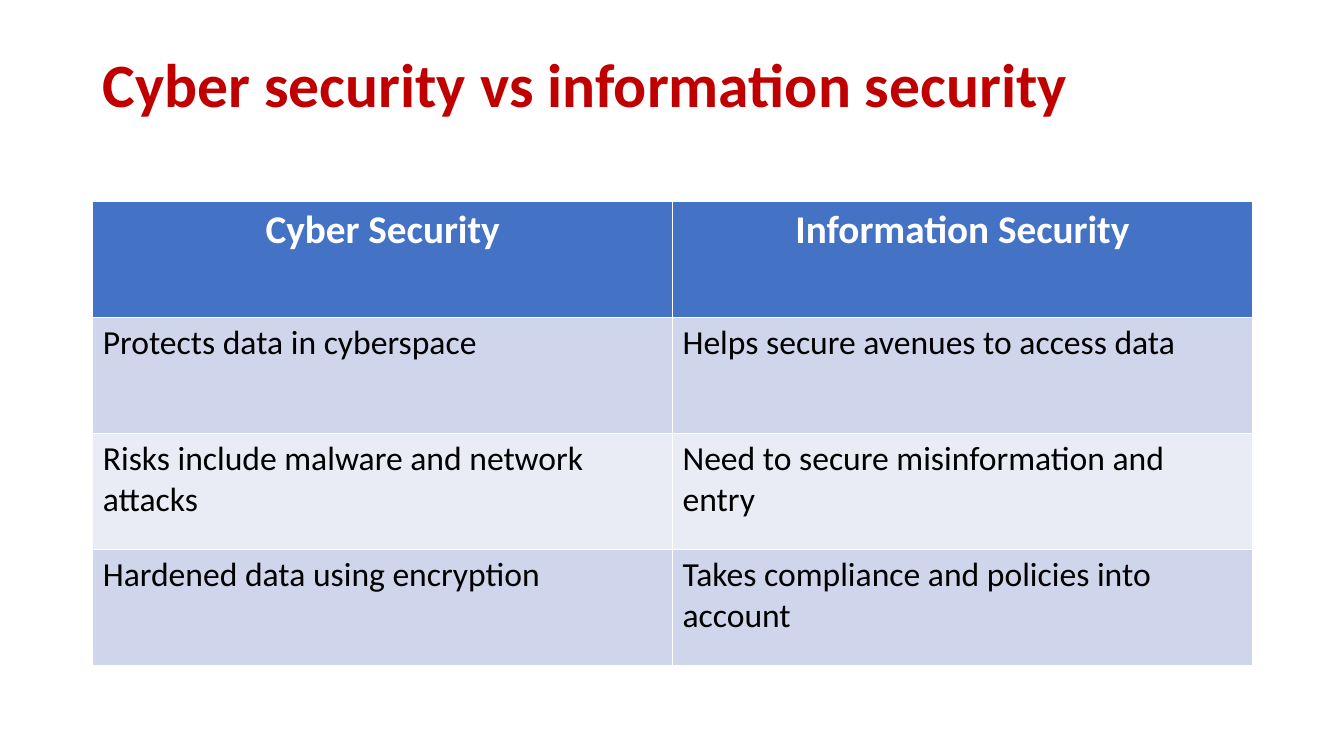
from pptx import Presentation
from pptx.dml.color import RGBColor
from pptx.enum.text import MSO_ANCHOR, PP_ALIGN
from pptx.util import Inches, Pt

LEFT, CENTER = PP_ALIGN.LEFT, PP_ALIGN.CENTER
MIDDLE = MSO_ANCHOR.MIDDLE
FONT = "Calibri"
COLORS = {
    "title": "C00000",
    "head": "4472C4",
    "odd": "CFD5EA",
    "even": "E9EBF5",
    "light": "FFFFFF",
    "dark": "000000",
}
ROWS = [
    ("Cyber Security", "Information Security"),
    ("Protects data in cyberspace", "Helps secure avenues to access data"),
    ("Risks include malware and network attacks", "Need to secure misinformation and entry"),
    ("Hardened data using encryption", "Takes compliance and policies into account"),
]
EDGE, WIDTH, ROW = Inches(0.92), Inches(11.5), Inches(1.15)


def add_run(para, text, size, color, bold):
    run = para.add_run()
    run.text = text
    run.font.name = FONT
    run.font.size = Pt(size)
    run.font.bold = bold
    run.font.color.rgb = RGBColor.from_string(COLORS[color])


deck = Presentation()
deck.slide_width, deck.slide_height = Inches(13.33), Inches(7.5)
slide = deck.slides.add_slide(deck.slide_layouts[5])

title = slide.shapes.title
title.left, title.top = EDGE, Inches(0.4)
title.width, title.height = WIDTH, Inches(0.93)
frame = title.text_frame
frame.word_wrap = True
frame.vertical_anchor = MIDDLE
para = frame.paragraphs[0]
para.alignment = LEFT
para.line_spacing = 0.9
add_run(para, "Cyber security vs information security", 44, "title", True)

table = slide.shapes.add_table(
    len(ROWS), len(ROWS[0]), EDGE, Inches(2), WIDTH, ROW * len(ROWS)
).table
for r, texts in enumerate(ROWS):
    table.rows[r].height = ROW
    head = r == 0
    fill = "head" if head else "odd" if r % 2 else "even"
    for c, text in enumerate(texts):
        cell = table.cell(r, c)
        cell.fill.solid()
        cell.fill.fore_color.rgb = RGBColor.from_string(COLORS[fill])
        para = cell.text_frame.paragraphs[0]
        para.alignment = CENTER if head else LEFT
        add_run(para, text, 28 if head else 24, "light" if head else "dark", head)

deck.save("out.pptx")
